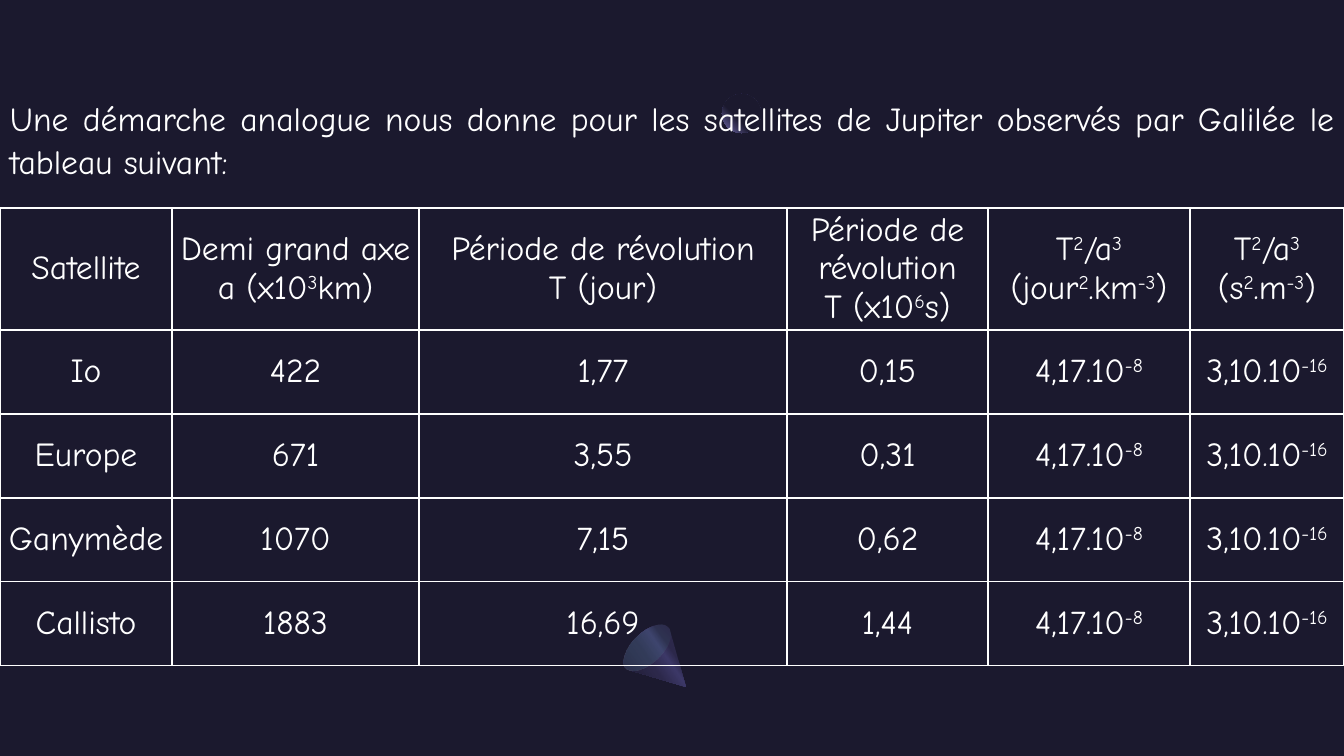
from dataclasses import dataclass

from lxml.etree import SubElement
from pptx import Presentation
from pptx.dml.color import RGBColor
from pptx.enum.shapes import MSO_SHAPE
from pptx.enum.text import MSO_ANCHOR, MSO_AUTO_SIZE, PP_ALIGN
from pptx.oxml.ns import qn
from pptx.util import Emu, Pt

W, H = 1344, 756
SCALE = 12192000 / W


@dataclass(frozen=True)
class Theme:
    night: str = "1B192E"
    ink: str = "FFFFFF"
    font: str = "Comic Neue"
    size: int = 24
    border: int = 1
    planet: tuple = ((60, "1B192E", 100), (100, "7771B2", 100))
    cone: tuple = ((30, "2C284A", 100), (40, "3C3867", 100),
                   (60, "2C284A", 100), (100, "1B192E", 100))
    cone_base: tuple = ((0, "454075", 33), (100, "5BEFC1", 0))


THEME = Theme()

INTRO = ("Une démarche analogue nous donne pour les satellites de Jupiter "
         "observés par Galilée le tableau suivant:")
COLS = [172, 247, 368, 201, 202, 154]
HEAD_H, ROW_H = 122, 84
# Text between two ^ is superscript; a line feed starts a paragraph.
HEADS = ["Satellite", "Demi grand axe\na (x10^3^km)", "Période de révolution\nT (jour)",
         "Période de révolution\nT (x10^6^s)", "T^2^/a^3^\n(jour^2^.km^-3^)",
         "T^2^/a^3^\n(s^2^.m^-3^)"]
RATIOS = ["4,17.10^-8^", "3,10.10^-16^"]
MOONS = [["Io", "422", "1,77", "0,15"],
         ["Europe", "671", "3,55", "0,31"],
         ["Ganymède", "1070", "7,15", "0,62"],
         ["Callisto", "1883", "16,69", "1,44"]]

CONE_TIP, CONE_START = (686, 687), (629, 670)
CONE_CURVES = [((628, 670), (627, 670), (626, 669)),
               ((621, 663), (625, 649), (637, 637)),
               ((648, 626), (662, 621), (668, 627)),
               ((669, 628), (670, 629), (670, 630))]


def px(n):
    return Emu(round(n * SCALE))


def box(*lengths):
    return [px(n) for n in lengths]


def add_rich_text(tf, text, align, spacing=None):
    for i, line in enumerate(text.split("\n")):
        p = tf.paragraphs[0] if i == 0 else tf.add_paragraph()
        p.alignment = align
        p.line_spacing = spacing
        for j, part in enumerate(line.split("^")):
            if not part:
                continue
            r = p.add_run()
            r.text = part
            r.font.name = THEME.font
            r.font.size = Pt(THEME.size)
            r.font.color.rgb = RGBColor.from_string(THEME.ink)
            if j % 2:
                r._r.get_or_add_rPr().set("baseline", "30000")


def paint_gradient(sp, stops, angle=None):
    """Linear at a clockwise angle, or circular from the top right corner."""
    sp.shadow.inherit = False
    sp.line.fill.background()
    sp.fill.gradient()
    grad = sp._element.spPr.find(qn("a:gradFill"))
    for child in list(grad):
        grad.remove(child)
    gs_list = SubElement(grad, qn("a:gsLst"))
    for pos, color, alpha in stops:
        gs = SubElement(gs_list, qn("a:gs"), pos=str(pos * 1000))
        clr = SubElement(gs, qn("a:srgbClr"), val=color)
        if alpha < 100:
            SubElement(clr, qn("a:alpha"), val=str(alpha * 1000))
    if angle is None:
        circle = SubElement(grad, qn("a:path"), path="circle")
        SubElement(circle, qn("a:fillToRect"), l="100000", b="100000")
    else:
        SubElement(grad, qn("a:lin"), ang=str(angle * 60000), scaled="0")


def add_ellipse(s, bounds, stops, angle=None, rotation=0):
    sp = s.shapes.add_shape(MSO_SHAPE.OVAL, *box(*bounds))
    sp.rotation = rotation
    paint_gradient(sp, stops, angle)


def bezier(a, b, c, d, steps=8):
    for t in (i / steps for i in range(1, steps + 1)):
        u = 1 - t
        yield tuple(u**3 * k + 3 * u * u * t * m + 3 * u * t * t * n + t**3 * o
                    for k, m, n, o in zip(a, b, c, d))


def add_cone(s):
    points, pen = [CONE_START], CONE_START
    for curve in CONE_CURVES:
        points += bezier(pen, *curve)
        pen = curve[-1]
    fb = s.shapes.build_freeform(*box(*CONE_TIP))
    fb.add_line_segments([box(*pt) for pt in points], close=True)
    paint_gradient(fb.convert_to_shape(), THEME.cone, 145)
    add_ellipse(s, (632, 618, 30, 59), THEME.cone_base, 90, 225)


def add_intro(s):
    tf = s.shapes.add_textbox(*box(0, 90, W, 91)).text_frame
    tf.word_wrap = True
    tf.auto_size = MSO_AUTO_SIZE.SHAPE_TO_FIT_TEXT
    add_rich_text(tf, INTRO, PP_ALIGN.JUSTIFY, 1.07)


def add_borders(cell):
    tc_pr = cell._tc.get_or_add_tcPr()
    for side in ("lnL", "lnR", "lnT", "lnB"):
        ln = SubElement(tc_pr, qn("a:" + side), w=str(Pt(THEME.border)))
        fill = SubElement(ln, qn("a:solidFill"))
        SubElement(fill, qn("a:srgbClr"), val=THEME.ink)


def add_moon_table(s):
    rows = [HEADS] + [moon + RATIOS for moon in MOONS]
    heights = [HEAD_H] + [ROW_H] * len(MOONS)
    table = s.shapes.add_table(len(rows), len(COLS),
                               *box(0, 208, W, sum(heights))).table
    table.first_row = table.horz_banding = False
    for col, width in zip(table.columns, COLS):
        col.width = px(width)
    for row, height, texts in zip(table.rows, heights, rows):
        row.height = px(height)
        for cell, text in zip(row.cells, texts):
            cell.margin_left = cell.margin_right = 0
            cell.margin_top = cell.margin_bottom = 0
            cell.vertical_anchor = MSO_ANCHOR.MIDDLE
            add_borders(cell)
            cell.fill.background()
            add_rich_text(cell.text_frame, text, PP_ALIGN.CENTER)


def main():
    prs = Presentation()
    prs.slide_width, prs.slide_height = box(W, H)
    s = prs.slides.add_slide(prs.slide_layouts[6])
    s.background.fill.solid()
    s.background.fill.fore_color.rgb = RGBColor.from_string(THEME.night)
    add_ellipse(s, (722, 94, 39, 39), THEME.planet)
    add_cone(s)
    add_intro(s)
    add_moon_table(s)
    prs.save("out.pptx")


if __name__ == "__main__":
    main()
